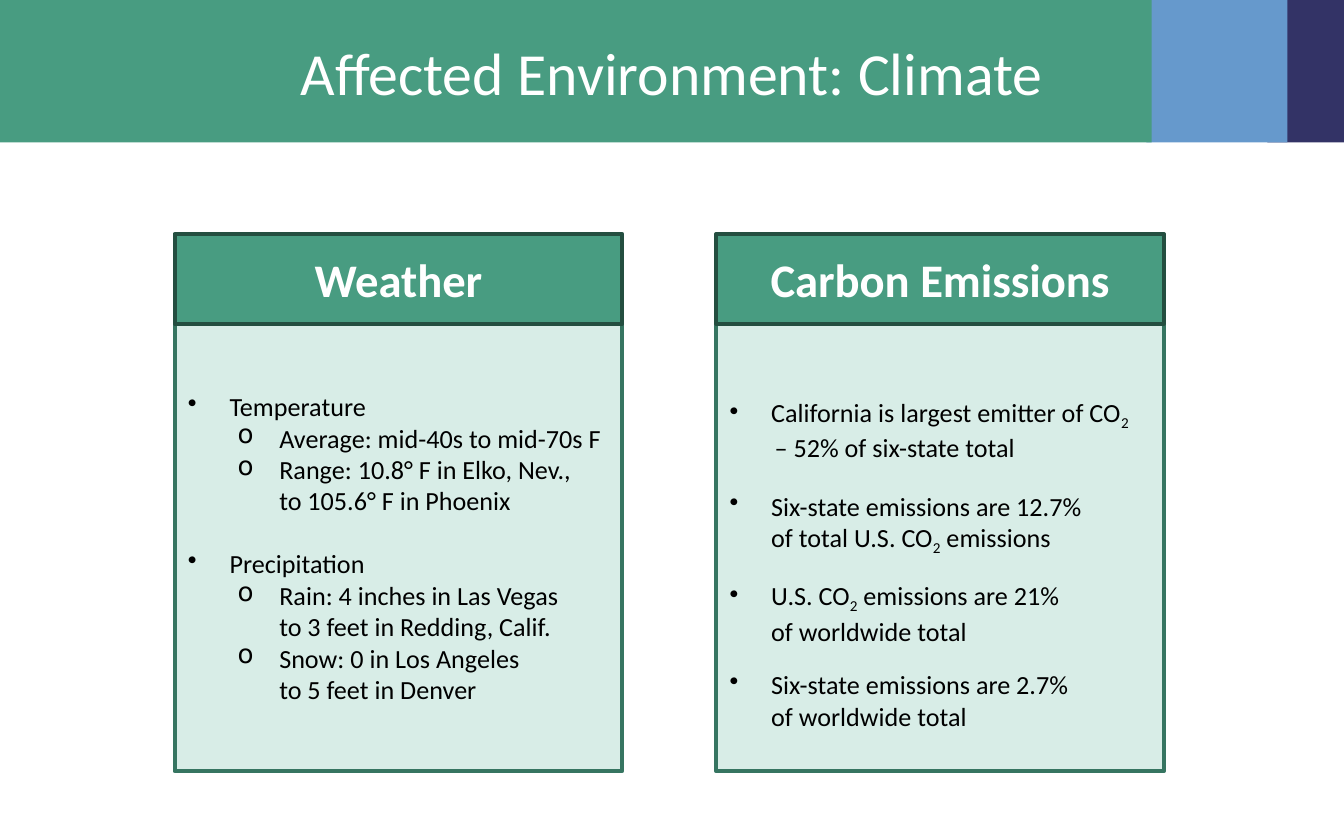
from lxml import etree
from pptx import Presentation, util as u
from pptx.dml.color import RGBColor
from pptx.enum import shapes, text
from pptx.oxml.ns import qn

NAVY = RGBColor(0x33, 0x33, 0x66)
BLUE = RGBColor(0x66, 0x99, 0xCC)
GREEN = RGBColor(0x48, 0x9C, 0x81)
MINT = RGBColor(0xD8, 0xED, 0xE7)
EDGE = RGBColor(0x36, 0x75, 0x61)
DARK = RGBColor(0x24, 0x4E, 0x40)
WHITE = RGBColor(0xFF, 0xFF, 0xFF)
BLACK = RGBColor(0, 0, 0)

COLS, ROWS = 100, 62.5
BARS = [(94.3, 5.7, NAVY), (85.3, 10.5, BLUE), (0, 85.7, GREEN)]

WEATHER = [
    (0, 0, "Temperature"),
    (1, 0, "Average: mid-40s to mid-70s F"),
    (1, 0, "Range: 10.8° F in Elko, Nev., \nto 105.6° F in Phoenix"),
    (0, 17, "Precipitation"),
    (1, 0, "Rain: 4 inches in Las Vegas\nto 3 feet in Redding, Calif."),
    (1, 0, "Snow: 0 in Los Angeles \nto 5 feet in Denver"),
]
CARBON = [
    (0, 0, "California is largest emitter of CO~2\n ~– 52% of six-state total"),
    (0, 0, "Six-state emissions are 12.7% \nof total U.S. CO~2~ emissions"),
    (0, 0, "U.S. CO~2~ emissions are 21% \nof worldwide total"),
    (0, 0, "Six-state emissions are 2.7% \nof worldwide total"),
]
PANELS = [
    (13, "Weather", WEATHER, 0, 0.05),
    (53.3, "Carbon Emissions", CARBON, 12, 0.29),
]


class Deck:
    face = "Calibri"
    size = 14
    marks = ((0.31, "•"), (0.68, "o"))

    def __init__(self):
        self.prs = Presentation()
        self.prs.slide_width = u.Inches(10)
        self.prs.slide_height = u.Inches(6.25)
        self.slide = self.prs.slides.add_slide(self.prs.slide_layouts[5])

    def area(self, x, y, w, h):
        wide, high = self.prs.slide_width, self.prs.slide_height
        return [int(n) for n in (x * wide / COLS, y * high / ROWS,
                                 w * wide / COLS, h * high / ROWS)]

    def style(self, font, color, size, bold=False):
        look = {"name": self.face, "size": u.Pt(size), "bold": bold}
        for key, val in look.items():
            setattr(font, key, val)
        font.color.rgb = color

    def box(self, area, fill, line=None):
        shape = self.slide.shapes.add_shape(
            shapes.MSO_SHAPE.RECTANGLE, *self.area(*area))
        shape.shadow.inherit = False
        shape.fill.solid()
        shape.fill.fore_color.rgb = fill
        if line is None:
            shape.line.fill.background()
        else:
            shape.line.color.rgb = line
            shape.line.width = u.Pt(2)
        return shape

    def label(self, shape, words, size, bold=False):
        frame = shape.text_frame
        frame.word_wrap = True
        frame.vertical_anchor = text.MSO_ANCHOR.MIDDLE
        para = frame.paragraphs[0]
        para.alignment = text.PP_ALIGN.CENTER
        run = para.add_run()
        run.text = words
        self.style(run.font, WHITE, size, bold)

    def title(self, words, area):
        shape = self.slide.shapes.title
        keys = ("left", "top", "width", "height")
        for key, val in zip(keys, self.area(*area)):
            setattr(shape, key, val)
        self.label(shape, words, 32)
        self.slide.shapes._spTree.append(shape._element)

    def rich(self, para, words):
        for i, part in enumerate(words.split("~")):
            base = {"baseline": "-25000"} if i % 2 else {}
            for j, line in enumerate(part.split("\n")):
                if j:
                    para.add_line_break()
                    etree.SubElement(para._p[-1], qn("a:rPr"),
                                     sz=str(self.size * 100), **base)
                if line:
                    run = para.add_run()
                    run.text = line
                    self.style(run.font, BLACK, self.size)
                    for key, val in base.items():
                        run.font._element.set(key, val)

    def bullets(self, shape, items, after, top):
        frame = shape.text_frame
        frame.word_wrap = True
        frame.vertical_anchor = text.MSO_ANCHOR.MIDDLE
        frame.margin_top = u.Inches(top)
        for i, (level, before, words) in enumerate(items):
            para = frame.add_paragraph() if i else frame.paragraphs[0]
            left, mark = self.marks[level]
            form = {"level": level, "alignment": text.PP_ALIGN.LEFT,
                    "space_before": u.Pt(before), "space_after": u.Pt(after)}
            for key, val in form.items():
                setattr(para, key, val)
            props = para._p.get_or_add_pPr()
            props.set("marL", str(u.Inches(left)))
            props.set("indent", str(u.Inches(-0.31)))
            etree.SubElement(props, qn("a:buChar"), char=mark)
            self.rich(para, words)

    def panel(self, x, head, items, after, top):
        body = self.box((x, 24.1, 33.3, 33.3), MINT, EDGE)
        self.bullets(body, items, after, top)
        cap = self.box((x, 17.4, 33.3, 6.7), GREEN, DARK)
        self.label(cap, head, 25, True)


def main():
    deck = Deck()
    for x, w, color in BARS:
        deck.box((x, 0, w, 10.6), color)
    deck.title("Affected Environment: Climate", (5, 1.2, 90, 8.3))
    for panel in PANELS:
        deck.panel(*panel)
    deck.prs.save("out.pptx")


if __name__ == "__main__":
    main()
